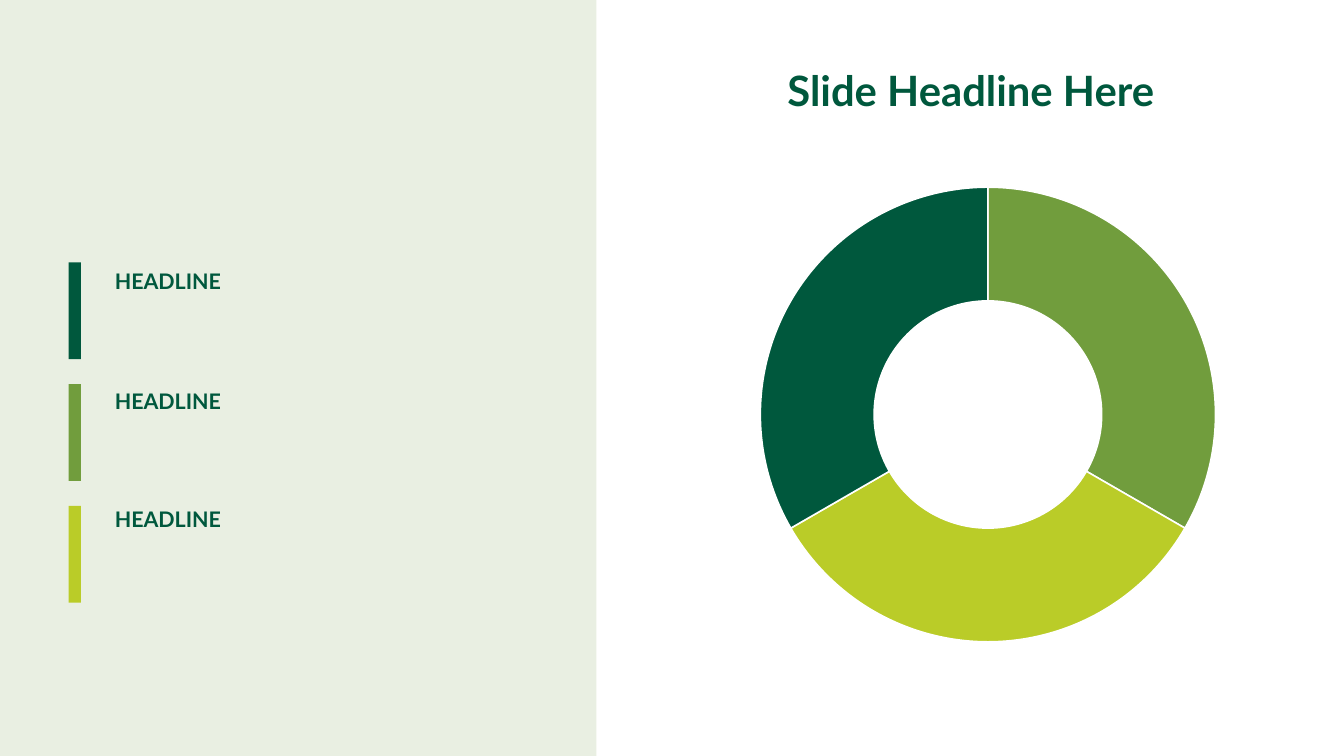
import dataclasses

import pptx
import pptx.chart.data
import pptx.dml.color
import pptx.enum.chart
import pptx.enum.shapes
import pptx.enum.text
import pptx.util
from lxml import etree

Inches = pptx.util.Inches
Pt = pptx.util.Pt
RGB = pptx.dml.color.RGBColor.from_string


@dataclasses.dataclass(frozen=True)
class Theme:
    font: str = "Lato"
    dark: str = "00583D"
    mid: str = "719D3D"
    lime: str = "BACC28"
    panel: str = "E9EFE2"
    white: str = "FFFFFF"
    black: str = "000000"
    title_size: float = 39.8
    label_size: float = 20.4
    chart_size: float = 10


theme = Theme()


def add_block(left, top, width, height, color):
    """Add a plain filled rectangle, measured in inches."""
    block = slide.shapes.add_shape(
        pptx.enum.shapes.MSO_SHAPE.RECTANGLE,
        Inches(left), Inches(top), Inches(width), Inches(height))
    block.shadow.inherit = False
    block.fill.solid()
    block.fill.fore_color.rgb = RGB(color)
    block.line.fill.background()


def write(frame, text, size, align):
    """Put one bold headline at the top of a text frame."""
    frame.word_wrap = True
    frame.auto_size = pptx.enum.text.MSO_AUTO_SIZE.NONE
    frame.vertical_anchor = pptx.enum.text.MSO_ANCHOR.TOP
    frame.text = text
    paragraph = frame.paragraphs[0]
    paragraph.alignment = align
    paragraph.font.name = theme.font
    paragraph.font.size = Pt(size)
    paragraph.font.bold = True
    paragraph.font.color.rgb = RGB(theme.dark)


deck = pptx.Presentation()
deck.slide_width = Inches(17.78)
deck.slide_height = Inches(10)
slide = deck.slides.add_slide(deck.slide_layouts[5])
slide.background.fill.solid()
slide.background.fill.fore_color.rgb = RGB(theme.white)

# Left panel with colour-keyed headlines
add_block(0, 0, 7.89, 10, theme.panel)
key_colors = (theme.dark, theme.mid, theme.lime)
label_tops = (3.5, 5.08, 6.64)
for row, (color, label_top) in enumerate(zip(key_colors, label_tops)):
    add_block(0.91, 3.47 + row * 1.61, 0.16, 1.28, color)
    label = slide.shapes.add_textbox(
        Inches(1.42), Inches(label_top), Inches(2.84), Inches(0.4))
    write(label.text_frame, "HEADLINE", theme.label_size,
          pptx.enum.text.PP_ALIGN.LEFT)

# Slide headline
title = slide.shapes.title
title.left, title.top = Inches(8.47), Inches(0.8)
title.width, title.height = Inches(8.75), Inches(0.75)
write(title.text_frame, "Slide Headline Here", theme.title_size,
      pptx.enum.text.PP_ALIGN.CENTER)

# Doughnut chart
shares = pptx.chart.data.CategoryChartData()
shares.categories = ["1", "2", "3"]
shares.add_series("Series 1", (33, 33, 33))
doughnut = slide.shapes.add_chart(
    pptx.enum.chart.XL_CHART_TYPE.DOUGHNUT,
    Inches(9.97), Inches(1.49), Inches(10.67), Inches(7.01), shares).chart
doughnut.has_legend = False
doughnut.has_title = False
doughnut.font.name = theme.font
doughnut.font.size = Pt(theme.chart_size)
doughnut.font.color.rgb = RGB(theme.black)

ring = doughnut.plots[0]
ring.vary_by_categories = True
for index, color in enumerate((theme.mid, theme.lime, theme.dark)):
    slice_format = ring.series[0].points[index].format
    slice_format.fill.solid()
    slice_format.fill.fore_color.rgb = RGB(color)
    slice_format.line.color.rgb = RGB(theme.white)
    slice_format.line.width = Pt(1.5)

chart_xml = doughnut.element
ns = {"c": chart_xml.nsmap["c"]}
c = "{%s}" % ns["c"]
chart_xml.find(".//c:holeSize", ns).set("val", "45")

# The ring fills the left part of the chart frame
plot_area = chart_xml.find(".//c:plotArea", ns)
for old_layout in plot_area.findall("c:layout", ns):
    plot_area.remove(old_layout)
layout = etree.Element(c + "layout")
plot_area.insert(0, layout)
manual = etree.SubElement(layout, c + "manualLayout")
for tag, value in (("layoutTarget", "inner"), ("xMode", "edge"),
                   ("yMode", "edge"), ("x", "0.004"), ("y", "0.141"),
                   ("w", "0.573"), ("h", "0.859")):
    etree.SubElement(manual, c + tag).set("val", value)

deck.save("out.pptx")
